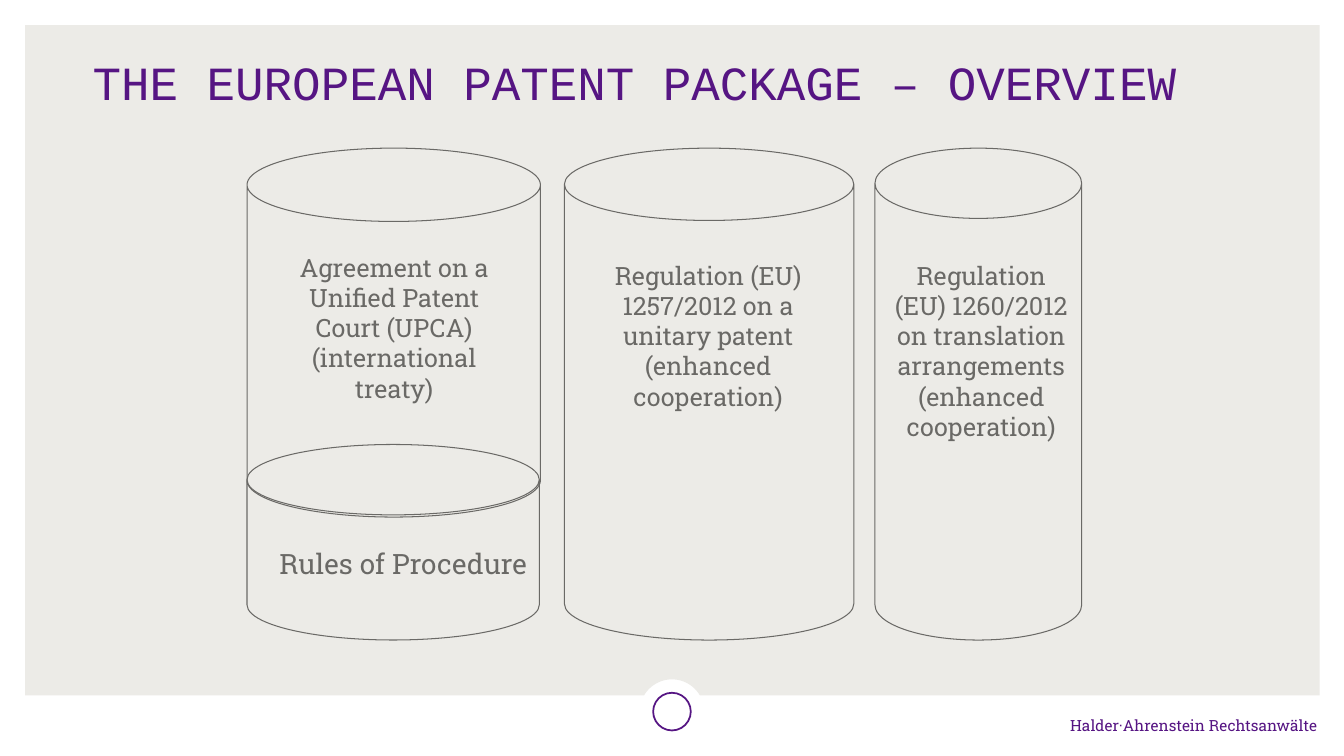
from dataclasses import dataclass
from math import cos, radians, sin

from pptx import Presentation
from pptx.dml.color import RGBColor
from pptx.enum.shapes import MSO_SHAPE
from pptx.enum.text import MSO_ANCHOR, PP_ALIGN
from pptx.shapes.autoshape import Shape
from pptx.slide import Slide
from pptx.util import Inches, Pt

CAN, OVAL = MSO_SHAPE.CAN, MSO_SHAPE.OVAL
TOP, MIDDLE, BOTTOM = MSO_ANCHOR.TOP, MSO_ANCHOR.MIDDLE, MSO_ANCHOR.BOTTOM
LEFT, CENTER, RIGHT = PP_ALIGN.LEFT, PP_ALIGN.CENTER, PP_ALIGN.RIGHT

PURPLE = RGBColor(0x56, 0x15, 0x83)
GREY = RGBColor(0x6A, 0x69, 0x66)
SAND = RGBColor(0xEC, 0xEB, 0xE7)
SERIF, MONO = "Roboto Slab", "Courier New"

# The slide is a grid of 100 columns by 100 rows.
WIDTH, HEIGHT = Inches(13.33), Inches(7.5)
COL, ROW = WIDTH / 100, HEIGHT / 100
PILLAR_TOP, PILLAR_BOTTOM = 19.6, 84.67
BADGE_X, BADGE_Y = 50, 94.13


@dataclass(frozen=True)
class Box:
    """A rectangle in grid columns (left, width) and rows (top, height)."""
    left: float
    top: float
    width: float
    height: float

    def emu(self) -> tuple[int, int, int, int]:
        return (round(self.left * COL), round(self.top * ROW),
                round(self.width * COL), round(self.height * ROW))


@dataclass(frozen=True)
class Pillar:
    left: float
    width: float
    top: float
    bottom: float
    lid: float


@dataclass(frozen=True)
class Label:
    box: Box
    lines: tuple[str, ...]
    size: float = 18
    font: str = SERIF
    color: RGBColor = GREY
    align: PP_ALIGN = CENTER
    anchor: MSO_ANCHOR = TOP
    inset: tuple[float, float] = (0, 0)
    spacing: float = 1.0


PADDED = (0.1, 0.05)

PILLARS = (
    Pillar(18.38, 21.83, PILLAR_TOP, 68.4, 0.25),
    Pillar(42, 21.53, PILLAR_TOP, PILLAR_BOTTOM, 0.25),
    Pillar(65.1, 15.38, PILLAR_TOP, PILLAR_BOTTOM, 0.34),
    Pillar(18.38, 21.75, 58.8, PILLAR_BOTTOM, 0.36),
)

LABELS = (
    Label(Box(6.9, 6.27, 84.3, 10.67),
          ("THE EUROPEAN PATENT PACKAGE – OVERVIEW",),
          34, MONO, PURPLE, LEFT, MIDDLE, spacing=0.75),
    Label(Box(19.88, 32.67, 18.9, 21.6),
          ("Agreement on a Unified Patent Court (UPCA)",
           "(international treaty)"), inset=PADDED),
    Label(Box(45, 33.73, 15.38, 25.6),
          ("Regulation (EU) 1257/2012 on a unitary patent",
           "(enhanced cooperation)"), inset=PADDED),
    Label(Box(65.63, 33.73, 14.78, 25.6),
          ("Regulation (EU) 1260/2012 on translation arrangements "
           "(enhanced cooperation)",), inset=PADDED),
    Label(Box(19.8, 72.27, 20.4, 7.87), ("Rules of Procedure",), 20),
    Label(Box(77.55, 92.8, 20.48, 4.4),
          ("Halder·Ahrenstein Rechtsanwälte",),
          11, color=PURPLE, align=RIGHT, anchor=BOTTOM),
)


def add_panel(s: Slide) -> None:
    """Draw the sand panel with a round notch in its lower edge."""
    left, top, right, bottom = 1.88 * COL, 3.33 * ROW, 98.2 * COL, 92 * ROW
    radius = 2.4 * COL
    notch = [(BADGE_X * COL + radius * cos(radians(a)),
              BADGE_Y * ROW - radius * sin(radians(a)))
             for a in range(30, 151, 5)]
    builder = s.shapes.build_freeform(round(left), round(top))
    builder.add_line_segments(
        [(right, top), (right, bottom), *notch, (left, bottom)], close=True)
    sp = builder.convert_to_shape()
    sp.shadow.inherit = False
    sp.fill.solid()
    sp.fill.fore_color.rgb = SAND
    sp.line.fill.background()


def add_outline(s: Slide, kind: MSO_SHAPE, box: Box,
                color: RGBColor, weight: float) -> Shape:
    sp = s.shapes.add_shape(kind, *box.emu())
    sp.shadow.inherit = False
    sp.fill.background()
    sp.line.color.rgb = color
    sp.line.width = Pt(weight)
    return sp


def add_pillar(s: Slide, pillar: Pillar) -> None:
    box = Box(pillar.left, pillar.top, pillar.width,
              pillar.bottom - pillar.top)
    sp = add_outline(s, CAN, box, GREY, 0.75)
    sp.adjustments[0] = pillar.lid


def add_label(s: Slide, label: Label) -> None:
    tf = s.shapes.add_textbox(*label.box.emu()).text_frame
    tf.word_wrap = True
    tf.vertical_anchor = label.anchor
    tf.margin_left = tf.margin_right = Inches(label.inset[0])
    tf.margin_top = tf.margin_bottom = Inches(label.inset[1])
    tf.text = "\n".join(label.lines)
    for p in tf.paragraphs:
        p.alignment = label.align
        p.line_spacing = label.spacing
        for r in p.runs:
            r.font.name = label.font
            r.font.size = Pt(label.size)
            r.font.color.rgb = label.color


def main() -> None:
    prs = Presentation()
    prs.slide_width, prs.slide_height = WIDTH, HEIGHT
    s = prs.slides.add_slide(prs.slide_layouts[6])
    add_panel(s)
    add_outline(s, OVAL, Box(BADGE_X - 1.4, BADGE_Y - 2.49, 2.8, 4.98),
                PURPLE, 1.25)
    for pillar in PILLARS:
        add_pillar(s, pillar)
    for label in LABELS:
        add_label(s, label)
    prs.save("out.pptx")


if __name__ == "__main__":
    main()
